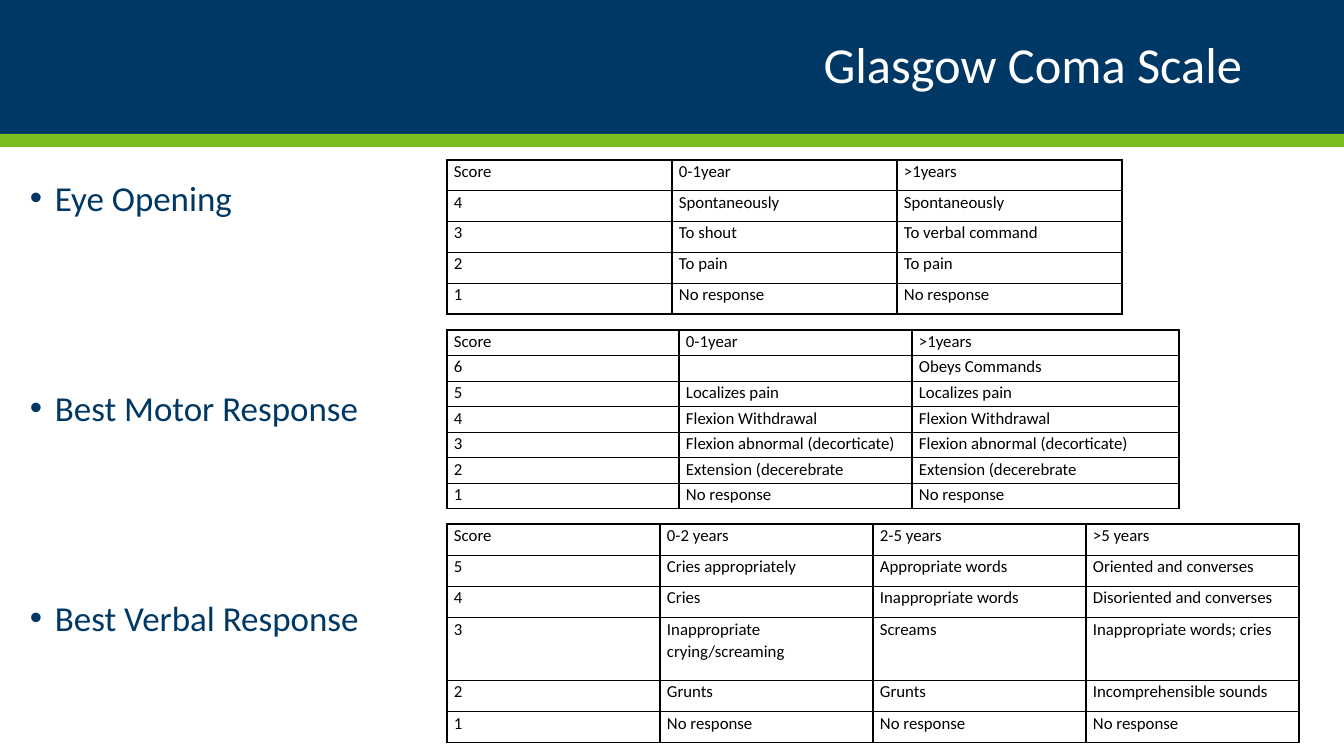
"""Build the Glasgow Coma Scale slide with its three scoring tables."""
from dataclasses import dataclass

from lxml.etree import SubElement
from pptx import Presentation
from pptx.dml.color import RGBColor
from pptx.enum.shapes import MSO_SHAPE as Preset
from pptx.enum.text import MSO_ANCHOR as Anchor, PP_ALIGN as Align
from pptx.oxml.ns import qn
from pptx.slide import Slide
from pptx.table import _Cell as Cell
from pptx.text.text import _Paragraph as Paragraph
from pptx.util import Emu, Pt

EMU_PER_PX = 914400 / 100.8
SLIDE_WIDTH, SLIDE_HEIGHT = 1344, 756


@dataclass(frozen=True)
class Theme:
    font: str = "Calibri"
    navy: str = "003865"
    green: str = "78BE21"
    white: str = "FFFFFF"
    black: str = "000000"
    title_size: int = 36
    bullet_size: int = 25
    table_size: int = 12
    bullet_gap: int = 120
    border_width: int = 1


@dataclass(frozen=True)
class Band:
    top: int
    height: int
    color: str


@dataclass(frozen=True)
class ScoreTable:
    top: int
    height: int
    columns: tuple[int, ...]
    row_weights: tuple[int, ...]
    rows: tuple[tuple[str, ...], ...]


THEME = Theme()
TABLE_LEFT = 447
CELL_INSET = 7
BULLET_INDENT = 25

BANDS = (Band(0, 134, THEME.navy), Band(134, 13, THEME.green))
SECTIONS = ("Eye Opening", "Best Motor Response", "Best Verbal Response")

EYE_OPENING = ScoreTable(160, 154, (225,) * 3, (1,) * 5, (
    ("Score", "0-1year", ">1years"),
    ("4", "Spontaneously", "Spontaneously"),
    ("3", "To shout", "To verbal command"),
    ("2", "To pain", "To pain"),
    ("1", "No response", "No response"),
))
MOTOR_RESPONSE = ScoreTable(330, 179, (232, 233, 267), (1,) * 7, (
    ("Score", "0-1year", ">1years"),
    ("6", "", "Obeys Commands"),
    ("5", "Localizes pain", "Localizes pain"),
    ("4", "Flexion Withdrawal", "Flexion Withdrawal"),
    ("3", "Flexion abnormal (decorticate)", "Flexion abnormal (decorticate)"),
    ("2", "Extension (decerebrate", "Extension (decerebrate"),
    ("1", "No response", "No response"),
))
VERBAL_RESPONSE = ScoreTable(524, 219, (213,) * 4, (1, 1, 1, 2, 1, 1), (
    ("Score", "0-2 years", "2-5 years", ">5 years"),
    ("5", "Cries appropriately", "Appropriate words", "Oriented and converses"),
    ("4", "Cries", "Inappropriate words", "Disoriented and converses"),
    ("3", "Inappropriate crying/screaming", "Screams", "Inappropriate words; cries"),
    ("2", "Grunts", "Grunts", "Incomprehensible sounds"),
    ("1", "No response", "No response", "No response"),
))


def px(length: float) -> Emu:
    return Emu(round(length * EMU_PER_PX))


def rgb(color: str) -> RGBColor:
    return RGBColor.from_string(color)


def format_runs(paragraph: Paragraph, size: int, color: str) -> None:
    for run in paragraph.runs:
        run.font.name = THEME.font
        run.font.size = Pt(size)
        run.font.color.rgb = rgb(color)


def add_band(slide: Slide, band: Band) -> None:
    shape = slide.shapes.add_shape(
        Preset.RECTANGLE, 0, px(band.top), px(SLIDE_WIDTH), px(band.height))
    shape.shadow.inherit = False
    shape.fill.solid()
    shape.fill.fore_color.rgb = rgb(band.color)
    shape.line.fill.background()


def add_title(slide: Slide, title: str) -> None:
    shape = slide.shapes.add_textbox(px(93), px(17), px(1159), px(101))
    text_frame = shape.text_frame
    text_frame.word_wrap = True
    text_frame.vertical_anchor = Anchor.MIDDLE
    text_frame.text = title
    paragraph = text_frame.paragraphs[0]
    paragraph.alignment = Align.RIGHT
    paragraph.line_spacing = 0.9
    format_runs(paragraph, THEME.title_size, THEME.white)


def add_bullet(paragraph: Paragraph) -> None:
    properties = paragraph._p.get_or_add_pPr()
    properties.set("marL", str(px(BULLET_INDENT)))
    properties.set("indent", str(-px(BULLET_INDENT)))
    bullet_color = SubElement(properties, qn("a:buClr"))
    SubElement(bullet_color, qn("a:srgbClr"), val=THEME.navy)
    SubElement(properties, qn("a:buFont"), typeface="Arial")
    SubElement(properties, qn("a:buChar"), char="•")


def add_sections(slide: Slide, sections: tuple[str, ...]) -> None:
    shape = slide.shapes.add_textbox(px(20), px(172), px(572), px(505))
    shape.fill.solid()
    shape.fill.fore_color.rgb = rgb(THEME.white)
    text_frame = shape.text_frame
    text_frame.word_wrap = True
    text_frame.text = "\n".join(sections)
    for index, paragraph in enumerate(text_frame.paragraphs):
        paragraph.space_before = Pt(THEME.bullet_gap if index else 0)
        add_bullet(paragraph)
        format_runs(paragraph, THEME.bullet_size, THEME.navy)


def add_borders(cell: Cell) -> None:
    properties = cell._tc.get_or_add_tcPr()
    for side in ("lnL", "lnR", "lnT", "lnB"):
        line = SubElement(
            properties, qn(f"a:{side}"), w=str(Pt(THEME.border_width)))
        fill = SubElement(line, qn("a:solidFill"))
        SubElement(fill, qn("a:srgbClr"), val=THEME.black)


def fill_cell(cell: Cell, text: str) -> None:
    cell.margin_left = cell.margin_right = px(CELL_INSET)
    cell.margin_top = cell.margin_bottom = 0
    add_borders(cell)
    cell.fill.background()
    cell.text_frame.text = text
    paragraph = cell.text_frame.paragraphs[0]
    paragraph.line_spacing = 1.07
    format_runs(paragraph, THEME.table_size, THEME.black)
    if not text:
        SubElement(paragraph._p, qn("a:endParaRPr"), sz=str(THEME.table_size * 100))


def add_score_table(slide: Slide, score_table: ScoreTable) -> None:
    frame = slide.shapes.add_table(
        len(score_table.rows), len(score_table.columns),
        px(TABLE_LEFT), px(score_table.top),
        px(sum(score_table.columns)), px(score_table.height))
    table = frame.table
    table.first_row = table.horz_banding = False
    for column, width in zip(table.columns, score_table.columns):
        column.width = px(width)
    unit = score_table.height / sum(score_table.row_weights)
    for row, weight, texts in zip(
            table.rows, score_table.row_weights, score_table.rows):
        row.height = px(unit * weight)
        for cell, text in zip(row.cells, texts):
            fill_cell(cell, text)


def main() -> None:
    presentation = Presentation()
    presentation.slide_width = px(SLIDE_WIDTH)
    presentation.slide_height = px(SLIDE_HEIGHT)
    slide = presentation.slides.add_slide(presentation.slide_layouts[6])
    for band in BANDS:
        add_band(slide, band)
    add_title(slide, "Glasgow Coma Scale")
    add_sections(slide, SECTIONS)
    for score_table in (EYE_OPENING, MOTOR_RESPONSE, VERBAL_RESPONSE):
        add_score_table(slide, score_table)
    presentation.save("out.pptx")


if __name__ == "__main__":
    main()
